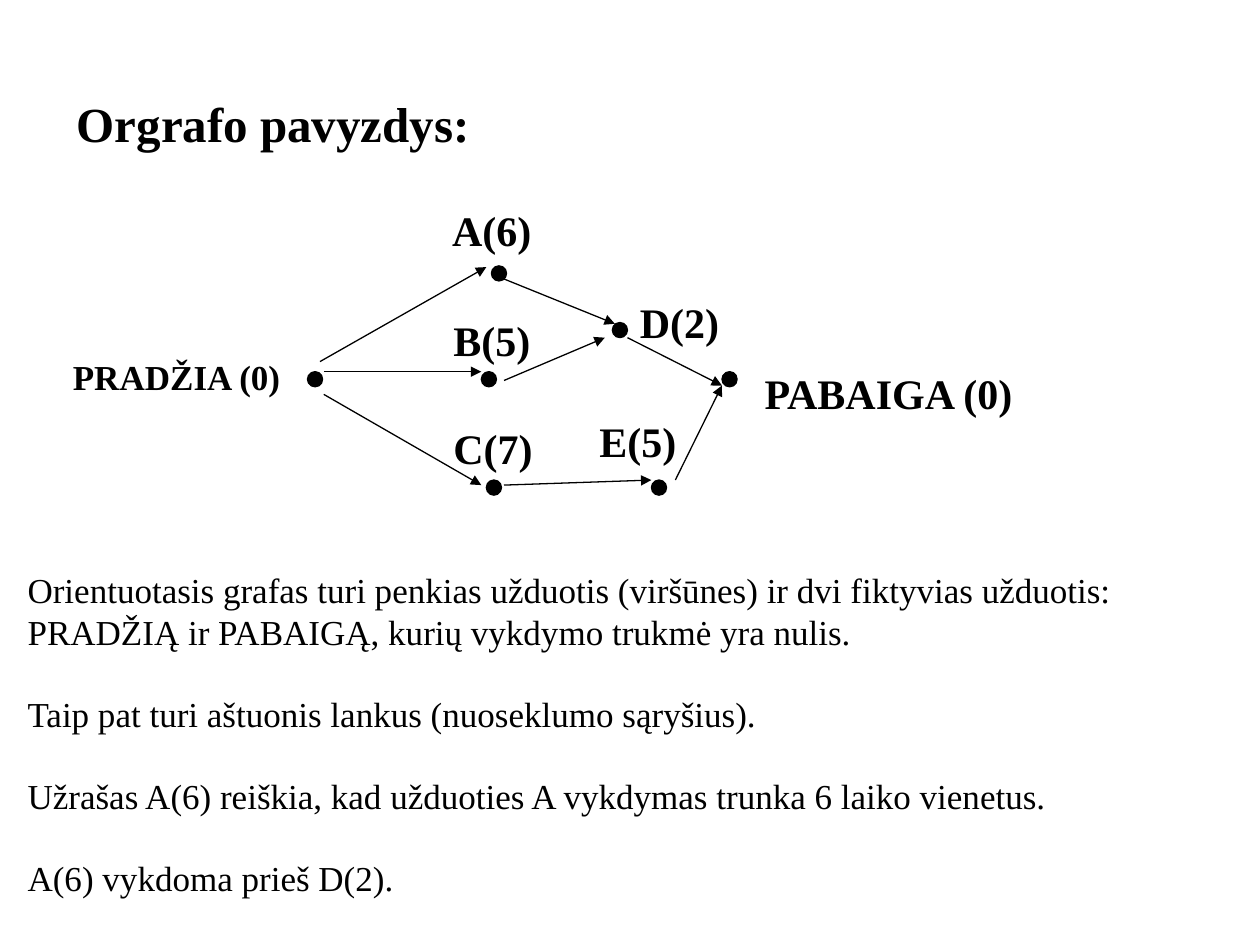
from lxml.etree import SubElement
from pptx import Presentation
from pptx.dml.color import RGBColor as Rgb
from pptx.enum.shapes import MSO_CONNECTOR as Link, MSO_SHAPE as Shape
from pptx.enum.text import MSO_ANCHOR as Anchor
from pptx.oxml.ns import qn
from pptx.util import Inches, Pt

FONT = "Times New Roman"
COLORS = {"ink": "000000", "page": "FFFFFF"}
INK = Rgb.from_string(COLORS["ink"])
DOT = 0.12

# Left and top of each vertex
DOTS = [(2.44, 2.95), (3.9, 2.11), (3.82, 2.95), (3.86, 3.81),
        (4.86, 2.56), (5.17, 3.81), (5.73, 2.95)]

# Start and end of each arc
ARCS = [
    (2.54, 2.87, 3.86, 2.12),
    (2.57, 2.95, 3.82, 2.95),
    (2.57, 3.13, 3.82, 3.85),
    (3.94, 2.19, 4.88, 2.57),
    (4, 3.02, 4.8, 2.68),
    (4, 3.85, 5.17, 3.81),
    (4.98, 2.68, 5.73, 3.06),
    (5.36, 3.81, 5.73, 3.06),
]

# Text, size and box of each label
LABELS = [
    ("A(6)", 24, (3.49, 1.57, 0.94, 0.38)),
    ("B(5)", 24, (3.5, 2.45, 1.23, 0.25)),
    ("C(7)", 24, (3.5, 3.3, 0.99, 0.38)),
    ("D(2)", 24, (4.98, 2.3, 0.99, 0.38)),
    ("E(5)", 24, (4.66, 3.25, 0.94, 0.38)),
    ("PRADŽIA (0)", 20, (0.48, 2.77, 1.97, 0.25)),
    ("PABAIGA (0)", 24, (5.97, 2.87, 2.32, 0.38)),
]

NOTES = [
    "Orientuotasis grafas turi penkias užduotis (viršūnes) ir dvi fiktyvias "
    "užduotis: PRADŽIĄ ir PABAIGĄ, kurių vykdymo trukmė yra nulis.",
    "Taip pat turi aštuonis lankus (nuoseklumo sąryšius).",
    "Užrašas A(6) reiškia, kad užduoties A vykdymas trunka 6 laiko vienetus.",
    "A(6) vykdoma prieš D(2).",
]


def add_text(shapes, box, lines, size, bold=False, gap=0):
    frame = shapes.add_textbox(*map(Inches, box)).text_frame
    frame.word_wrap = True
    for i, line in enumerate(lines):
        para = frame.add_paragraph() if i else frame.paragraphs[0]
        if i:
            para.space_before = Pt(gap)
        run = para.add_run()
        run.text = line
        font = run.font
        font.name, font.size, font.bold = FONT, Pt(size), bold
        font.color.rgb = INK
    return frame


def add_dot(shapes, left, top):
    dot = shapes.add_shape(Shape.FLOWCHART_CONNECTOR,
                           *map(Inches, (left, top, DOT, DOT)))
    dot.shadow.inherit = False
    dot.fill.solid()
    dot.fill.fore_color.rgb = INK
    dot.line.color.rgb = INK
    dot.line.width = Pt(0.75)


def add_arc(shapes, ends):
    arc = shapes.add_connector(Link.STRAIGHT, *map(Inches, ends))
    arc.line.color.rgb = INK
    arc.line.width = Pt(0.75)
    SubElement(arc.line._get_or_add_ln(), qn("a:tailEnd"), type="triangle")
    SubElement(arc._element.spPr, qn("a:effectLst"))


def main():
    deck = Presentation()
    deck.slide_width, deck.slide_height = Inches(10), Inches(7.5)
    slide = deck.slides.add_slide(deck.slide_layouts[6])
    fill = slide.background.fill
    fill.solid()
    fill.fore_color.rgb = Rgb.from_string(COLORS["page"])

    # Graph
    graph = slide.shapes.add_group_shape().shapes
    for spot in DOTS:
        add_dot(graph, *spot)
    for ends in ARCS:
        add_arc(graph, ends)
    for text, size, box in LABELS:
        add_text(graph, box, [text], size, bold=True)

    # Title
    title = add_text(slide.shapes, (0.26, 0.66, 3.61, 0.91),
                     ["Orgrafo pavyzdys:"], 28, bold=True)
    title.word_wrap = False
    title.vertical_anchor = Anchor.MIDDLE
    title.margin_left = Inches(0.35)
    title.margin_bottom = Inches(0.33)

    # Explanation
    add_text(slide.shapes, (0.12, 4.46, 9.72, 2.79), NOTES, 20, gap=23)

    deck.save("out.pptx")


if __name__ == "__main__":
    main()
